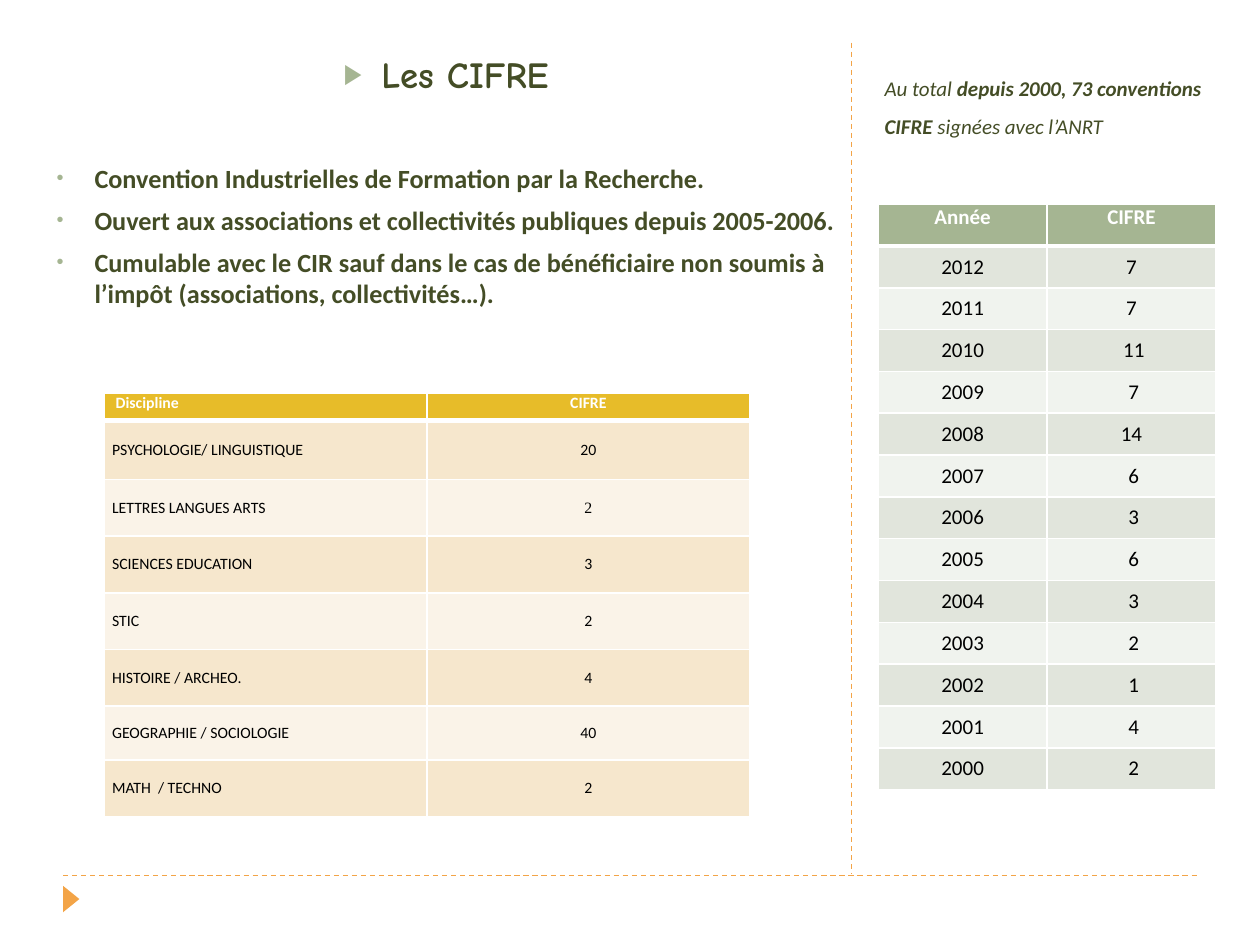
import pptx
import pptx.util
import pptx.dml.color
import pptx.enum.dml
import pptx.enum.shapes
import pptx.enum.text
import pptx.oxml
import pptx.oxml.ns
import lxml.etree

RGB = pptx.dml.color.RGBColor
Pt = pptx.util.Pt
ALIGN = pptx.enum.text.PP_ALIGN
ANCHOR = pptx.enum.text.MSO_ANCHOR
qn = pptx.oxml.ns.qn

OLIVE = RGB(0x44, 0x4D, 0x26)
SAGE = RGB(0xA5, 0xB5, 0x92)
MIST = RGB(0xE1, 0xE5, 0xDC)
PALE = RGB(0xF0, 0xF3, 0xEE)
GOLD = RGB(0xE7, 0xBC, 0x29)
SAND = RGB(0xF6, 0xE7, 0xCD)
CREAM = RGB(0xFA, 0xF3, 0xE8)
AMBER = RGB(0xF3, 0xA4, 0x47)
WHITE = RGB(0xFF, 0xFF, 0xFF)
BLACK = RGB(0, 0, 0)

deck = pptx.Presentation()
deck.slide_width = pptx.util.Inches(10)
deck.slide_height = pptx.util.Inches(7.5)
col = deck.slide_width / 100
row = deck.slide_height / 100
slide = deck.slides.add_slide(deck.slide_layouts[3])
shapes = slide.shapes
title, body, aside = slide.placeholders


def write(para, text, size, color, bold=False, face="Calibri"):
    run = para.add_run()
    run.text = text
    run.font.size = Pt(size)
    run.font.name = face
    run.font.bold = bold
    run.font.color.rgb = color
    return run


def bullet(para, sign):
    props = para._p.get_or_add_pPr()
    props.set("marL", str(int(3 * col)))
    props.set("indent", str(int(-3 * col)))
    tint = lxml.etree.SubElement(props, qn("a:buClr"))
    lxml.etree.SubElement(tint, qn("a:srgbClr"), val=str(SAGE))
    lxml.etree.SubElement(props, qn("a:buSzPct"), val="76000")
    lxml.etree.SubElement(props, qn("a:buFont"), typeface="Arial")
    lxml.etree.SubElement(props, qn("a:buChar"), char=sign)


for x1, y1, x2, y2 in [(5, 92.67, 95, 92.67), (67.6, 4.5, 67.6, 92.5)]:
    rule = shapes.add_connector(
        pptx.enum.shapes.MSO_CONNECTOR.STRAIGHT,
        int(x1 * col), int(y1 * row), int(x2 * col), int(y2 * row))
    rule.line.color.rgb = AMBER
    rule.line.width = Pt(0.75)
    rule.line.dash_style = pptx.enum.dml.MSO_LINE.DASH
    lxml.etree.SubElement(rule._element.spPr, qn("a:effectLst"))

mark = shapes.add_shape(
    pptx.enum.shapes.MSO_SHAPE.ISOSCELES_TRIANGLE,
    int(4.6 * col), int(94.27 * row), int(2.1 * col), int(1.73 * row))
mark.rotation = 90
mark.shadow.inherit = False
mark.fill.solid()
mark.fill.fore_color.rgb = AMBER
mark.line.fill.background()

for holder, x, y, w, h in [
    (title, 3.5, 4.8, 63.8, 7),
    (body, 3.5, 16.5, 63.8, 20),
    (aside, 69.2, 5.87, 27.5, 13),
]:
    holder.left, holder.top = int(x * col), int(y * row)
    holder.width, holder.height = int(w * col), int(h * row)
    frame = holder.text_frame
    frame.word_wrap = True
    frame.auto_size = pptx.enum.text.MSO_AUTO_SIZE.NONE
    frame.vertical_anchor = ANCHOR.TOP

head = title.text_frame.paragraphs[0]
head.alignment = ALIGN.CENTER
bullet(head, "▶")
write(head, "Les CIFRE", 21, OLIVE, True, "Comic Neue")

points = [
    "Convention Industrielles de Formation par la Recherche.",
    "Ouvert aux associations et collectivités publiques depuis 2005-2006.",
    "Cumulable avec le CIR sauf dans le cas de bénéficiaire non soumis à "
    "l’impôt (associations, collectivités…).",
]
for i, point in enumerate(points):
    frame = body.text_frame
    para = frame.add_paragraph() if i else frame.paragraphs[0]
    para.space_before = Pt(6)
    bullet(para, "•")
    write(para, point, 15, OLIVE, True)

note = aside.text_frame.paragraphs[0]
note.line_spacing = Pt(22)
note.space_before = Pt(6)
note.space_after = Pt(10)
props = note._p.get_or_add_pPr()
props.set("marL", "0")
props.set("indent", "0")
lxml.etree.SubElement(props, qn("a:buNone"))
for text, bold in [
    ("Au total ", False),
    ("depuis 2000, 73 conventions CIFRE", True),
    (" signées avec l’ANRT", False),
]:
    write(note, text, 12, OLIVE, bold).font.italic = True

years = [("Année", "CIFRE")] + list(zip(
    [str(year) for year in range(2012, 1999, -1)],
    ["7", "7", " 11", " 7", "14", " 6", " 3", " 6", " 3", " 2", " 1", " 4", " 2"]))
fields = [
    ("\u00a0Discipline".replace("\u00a0", " "), "CIFRE"),
    ("PSYCHOLOGIE/ LINGUISTIQUE", "20"),
    ("LETTRES LANGUES ARTS", "2"),
    ("SCIENCES EDUCATION", "3"),
    ("STIC", "2"),
    ("HISTOIRE / ARCHEO.", "4"),
    ("GEOGRAPHIE / SOCIOLOGIE", "40"),
    ("MATH  / TECHNO", "2"),
]
grids = [
    (years, 69.7, 21.6, 13.4, [4.43] * 14, 12, 2.2,
     ALIGN.CENTER, (SAGE, MIST, PALE)),
    (fields, 8.3, 41.6, 25.6, [2.93, 6.2, 6, 6, 6, 6, 5.7, 6], 9, 0.6,
     ALIGN.LEFT, (GOLD, SAND, CREAM)),
]
for data, x, y, wide, highs, size, pad, side, (top, odd, even) in grids:
    table = shapes.add_table(
        len(data), 2, int(x * col), int(y * row),
        int(2 * wide * col), int(sum(highs) * row)).table
    for c in range(2):
        table.columns[c].width = int(wide * col)
    for r, pair in enumerate(data):
        table.rows[r].height = int(highs[r] * row)
        for c, text in enumerate(pair):
            cell = table.cell(r, c)
            cell.margin_left = cell.margin_right = int(pad * col)
            cell.margin_top = cell.margin_bottom = 0
            cell.vertical_anchor = ANCHOR.MIDDLE if r else ANCHOR.TOP
            cell.fill.solid()
            cell.fill.fore_color.rgb = (odd if r % 2 else even) if r else top
            para = cell.text_frame.paragraphs[0]
            para.alignment = ALIGN.CENTER if c else side
            serif = data is fields and (r, c) == (2, 1)
            write(para, text, size, BLACK if r else WHITE, r == 0,
                  "Times New Roman" if serif else "Calibri")
            for i, edge in enumerate(["L", "R", "T", "B"]):
                thick = (r, edge) in [(0, "B"), (1, "T")]
                line = lxml.etree.Element(
                    qn("a:ln" + edge), w=str(Pt(3 if thick else 1)))
                fill = lxml.etree.SubElement(line, qn("a:solidFill"))
                lxml.etree.SubElement(fill, qn("a:srgbClr"), val=str(WHITE))
                cell._tc.get_or_add_tcPr().insert(i, line)

deck.save("out.pptx")
